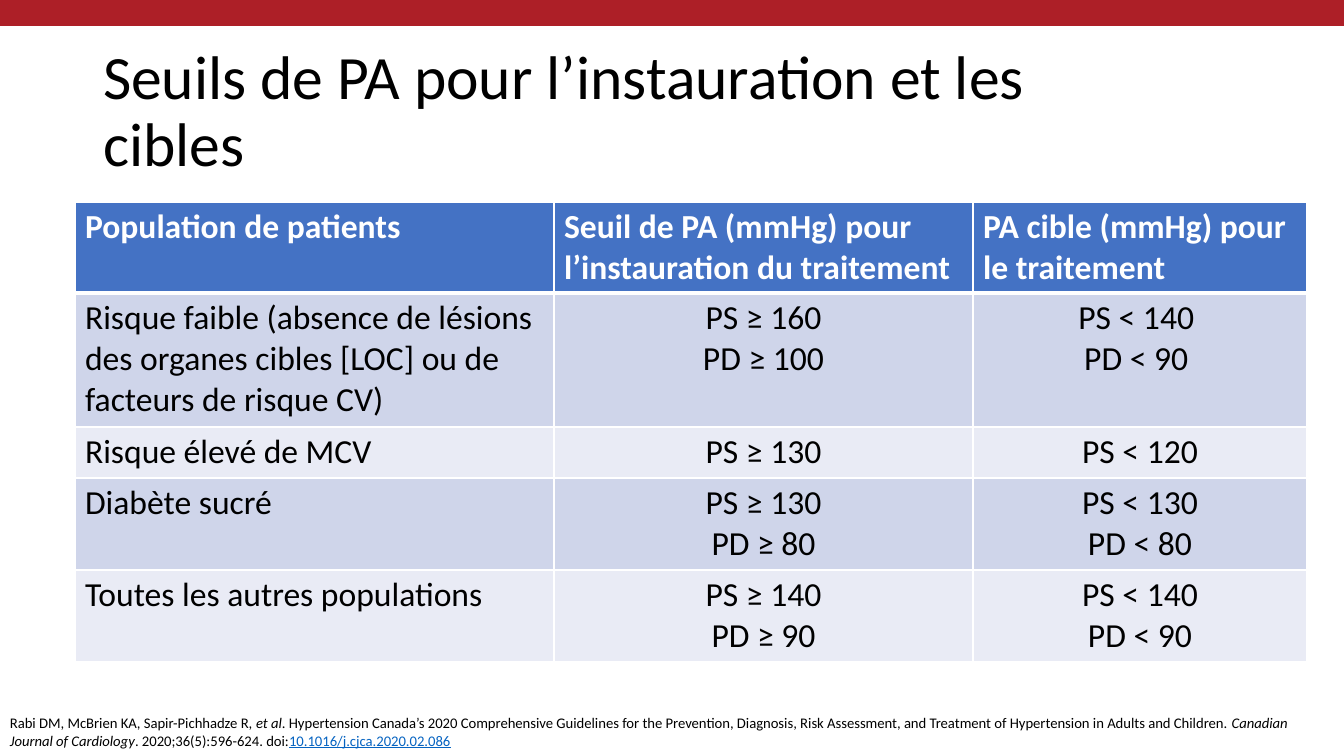
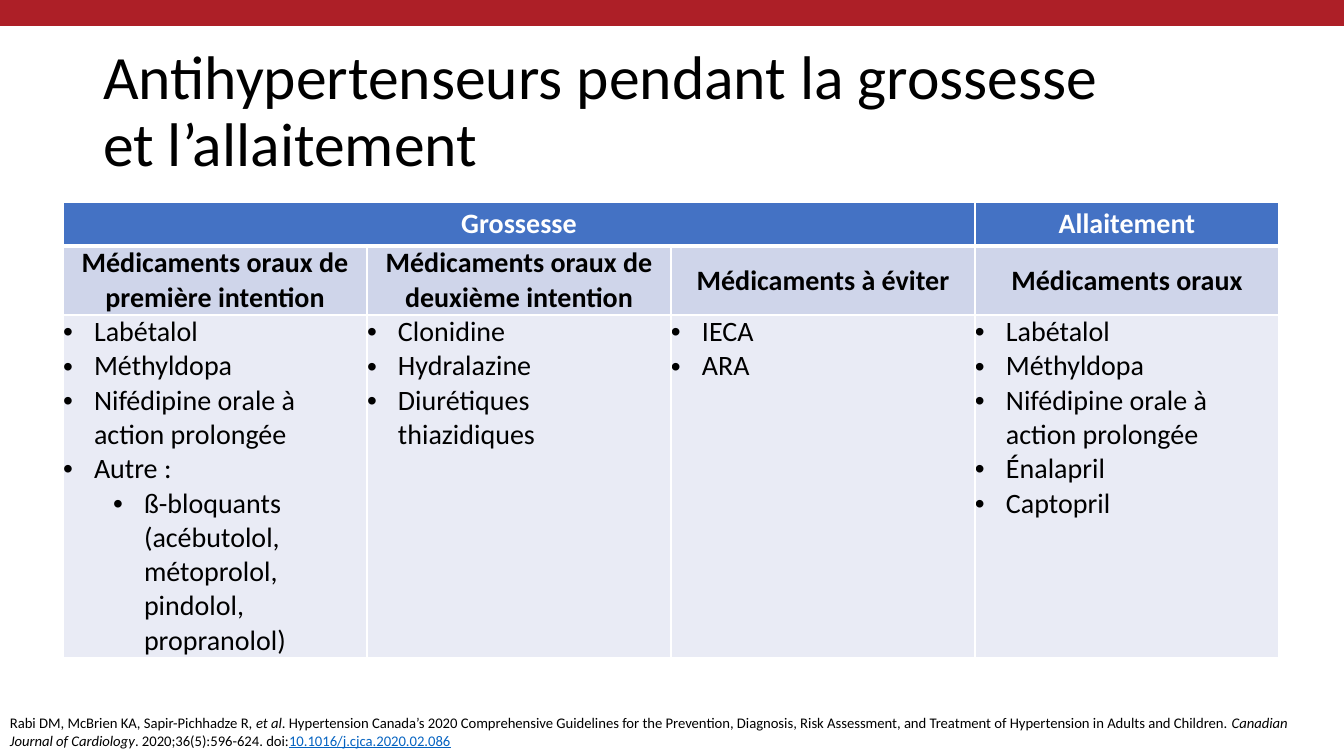
from lxml.etree import SubElement
from pptx import Presentation
from pptx.dml.color import RGBColor
from pptx.enum.shapes import MSO_SHAPE
from pptx.enum.text import MSO_ANCHOR, MSO_AUTO_SIZE, PP_ALIGN
from pptx.oxml.ns import qn
from pptx.util import Emu, Pt

FONT = "Calibri"
BLACK = RGBColor(0x00, 0x00, 0x00)
WHITE = RGBColor(0xFF, 0xFF, 0xFF)
BAND_RED = RGBColor(0xAD, 0x1F, 0x27)
HEADER_BLUE = RGBColor(0x44, 0x72, 0xC4)
ROW_TINTS = [RGBColor(0xCF, 0xD5, 0xEA), RGBColor(0xE9, 0xEB, 0xF5)]
LINK_BLUE = RGBColor(0x05, 0x63, 0xC1)

SLIDE_WIDTH, SLIDE_HEIGHT = 1344, 756
TABLE_TOP = 202
BULLET_INDENT, LEVEL_STEP = 31, 50

# (text, italic, colour)
CITATION = [
    ("Rabi DM, McBrien KA, Sapir-Pichhadze R, ", False, BLACK),
    ("et al", True, BLACK),
    (". Hypertension Canada’s 2020 Comprehensive Guidelines for the Prevention, Diagnosis, "
     "Risk Assessment, and Treatment of Hypertension in Adults and Children. ", False, BLACK),
    ("Canadian Journal of Cardiology", True, BLACK),
    (". 2020;36(5):596-624. doi:", False, BLACK),
    ("10.1016/j.cjca.2020.02.086", False, LINK_BLUE),
]

THRESHOLDS_TITLE = "Seuils de PA pour l’instauration et les cibles"
THRESHOLDS = [
    ["Population de patients", "Seuil de PA (mmHg) pour l’instauration du traitement",
     "PA cible (mmHg) pour le traitement"],
    ["Risque faible (absence de lésions des organes cibles [LOC] ou de facteurs de risque CV)",
     "PS ≥ 160\nPD ≥ 100", "PS < 140 \nPD < 90 "],
    ["Risque élevé de MCV", "PS ≥ 130", "PS < 120"],
    ["Diabète sucré", "PS ≥ 130\nPD ≥ 80", "PS < 130\nPD < 80"],
    ["Toutes les autres populations", "PS ≥ 140\nPD ≥ 90", "PS < 140\nPD < 90"],
]

DRUGS_TITLE = "Antihypertenseurs pendant la grossesse et l’allaitement"
DRUG_GROUPS = ["Grossesse", "", "", "Allaitement"]
DRUG_HEADINGS = [
    "Médicaments oraux de première intention", "Médicaments oraux de deuxième intention",
    "Médicaments à éviter", "Médicaments oraux",
]
# (level, drug) for each column
DRUG_LISTS = [
    [(0, "Labétalol"), (0, "Méthyldopa"), (0, "Nifédipine orale à action prolongée"),
     (0, "Autre :"), (1, "ß-bloquants (acébutolol, métoprolol, pindolol, propranolol)")],
    [(0, "Clonidine"), (0, "Hydralazine"), (0, "Diurétiques thiazidiques")],
    [(0, "IECA"), (0, "ARA")],
    [(0, "Labétalol"), (0, "Méthyldopa"), (0, "Nifédipine orale à action prolongée"),
     (0, "Énalapril"), (0, "Captopril")],
]


def px(length):
    return Emu(round(length * 914400 / 100.8))


def box(left, top, width, height):
    return [px(length) for length in (left, top, width, height)]


def style_run(run, size, color, bold=False, italic=False):
    font = run.font
    font.name, font.size, font.bold, font.italic = FONT, Pt(size), bold, italic
    font.color.rgb = color


def add_framed_slide(prs, title_text):
    """Add a slide with the red band, the title and the citation."""
    slide = prs.slides.add_slide(prs.slide_layouts[5])
    band = slide.shapes.add_shape(MSO_SHAPE.RECTANGLE, *box(0, -8, SLIDE_WIDTH, 34))
    band.shadow.inherit = False
    band.fill.solid()
    band.fill.fore_color.rgb = BAND_RED
    band.line.fill.background()

    title = slide.shapes.title
    title.left, title.top, title.width, title.height = box(93, 40, 1038, 146)
    frame = title.text_frame
    frame.text = title_text
    frame.auto_size = MSO_AUTO_SIZE.NONE
    frame.vertical_anchor = MSO_ANCHOR.MIDDLE
    paragraph = frame.paragraphs[0]
    paragraph.alignment = PP_ALIGN.LEFT
    paragraph.line_spacing = 0.9
    style_run(paragraph.runs[0], 44, BLACK)

    citation = slide.shapes.add_textbox(*box(0, 709, SLIDE_WIDTH, 45)).text_frame
    citation.word_wrap = True
    for text, italic, color in CITATION:
        run = citation.paragraphs[0].add_run()
        run.text = text
        style_run(run, 10.5, color, italic=italic)
        run.font.underline = color == LINK_BLUE
    return slide


def set_borders(cell, top, bottom):
    properties = cell._tc.get_or_add_tcPr()
    for side, width in (("L", 1), ("R", 1), ("T", top), ("B", bottom)):
        line = SubElement(properties, qn(f"a:ln{side}"), w=str(Pt(width)))
        fill = SubElement(line, qn("a:solidFill"))
        SubElement(fill, qn("a:srgbClr"), val=str(WHITE))


def set_bullet(paragraph, level):
    paragraph.level = level
    properties = paragraph._p.get_or_add_pPr()
    properties.set("marL", str(px(BULLET_INDENT + level * LEVEL_STEP)))
    properties.set("indent", str(-px(BULLET_INDENT)))
    SubElement(properties, qn("a:buFont"), typeface="Arial")
    SubElement(properties, qn("a:buChar"), char="•")


def add_banded_table(slide, rows, left, widths, heights, size):
    """Add a table with a blue header over rows in alternating tints."""
    table = slide.shapes.add_table(
        len(rows), len(widths), *box(left, TABLE_TOP, sum(widths), sum(heights))).table
    table.first_row = table.horz_banding = False
    for column, width in zip(table.columns, widths):
        column.width = px(width)
    for row_index, (row, texts) in enumerate(zip(table.rows, rows)):
        row.height = px(heights[row_index])
        header = row_index == 0
        for cell, text in zip(row.cells, texts):
            set_borders(cell, top=3 if row_index == 1 else 1, bottom=3 if header else 1)
            cell.fill.solid()
            cell.fill.fore_color.rgb = HEADER_BLUE if header else ROW_TINTS[(row_index - 1) % 2]
            cell.text_frame.text = text
            for paragraph in cell.text_frame.paragraphs:
                for run in paragraph.runs:
                    style_run(run, size, WHITE if header else BLACK, bold=header)
    return table


def add_thresholds_slide(prs):
    slide = add_framed_slide(prs, THRESHOLDS_TITLE)
    table = add_banded_table(slide, THRESHOLDS, 75, [479, 419, 334], [91, 134, 51, 92, 92], 24)
    for row in list(table.rows)[1:]:
        for pressure in list(row.cells)[1:]:
            for paragraph in pressure.text_frame.paragraphs:
                paragraph.alignment = PP_ALIGN.CENTER


def add_drugs_slide(prs):
    slide = add_framed_slide(prs, DRUGS_TITLE)
    drug_texts = ["\n".join(drug for _, drug in drugs) for drugs in DRUG_LISTS]
    table = add_banded_table(slide, [DRUG_GROUPS, DRUG_HEADINGS, drug_texts],
                             63, [304] * 4, [44, 69, 343], 20)
    table.cell(0, 0).merge(table.cell(0, 2))
    for column, drugs in enumerate(DRUG_LISTS):
        group, heading, drug_list = (table.cell(row, column) for row in range(3))
        for cell in (heading, drug_list):
            cell.margin_left = cell.margin_right = cell.margin_top = cell.margin_bottom = 0
        for cell in (group, heading):
            cell.text_frame.paragraphs[0].alignment = PP_ALIGN.CENTER
        heading.vertical_anchor = MSO_ANCHOR.MIDDLE
        heading.text_frame.paragraphs[0].runs[0].font.bold = True
        for paragraph, (level, _) in zip(drug_list.text_frame.paragraphs, drugs):
            set_bullet(paragraph, level)


def main():
    prs = Presentation()
    prs.slide_width, prs.slide_height = px(SLIDE_WIDTH), px(SLIDE_HEIGHT)
    add_thresholds_slide(prs)
    add_drugs_slide(prs)
    prs.save("out.pptx")


if __name__ == "__main__":
    main()
